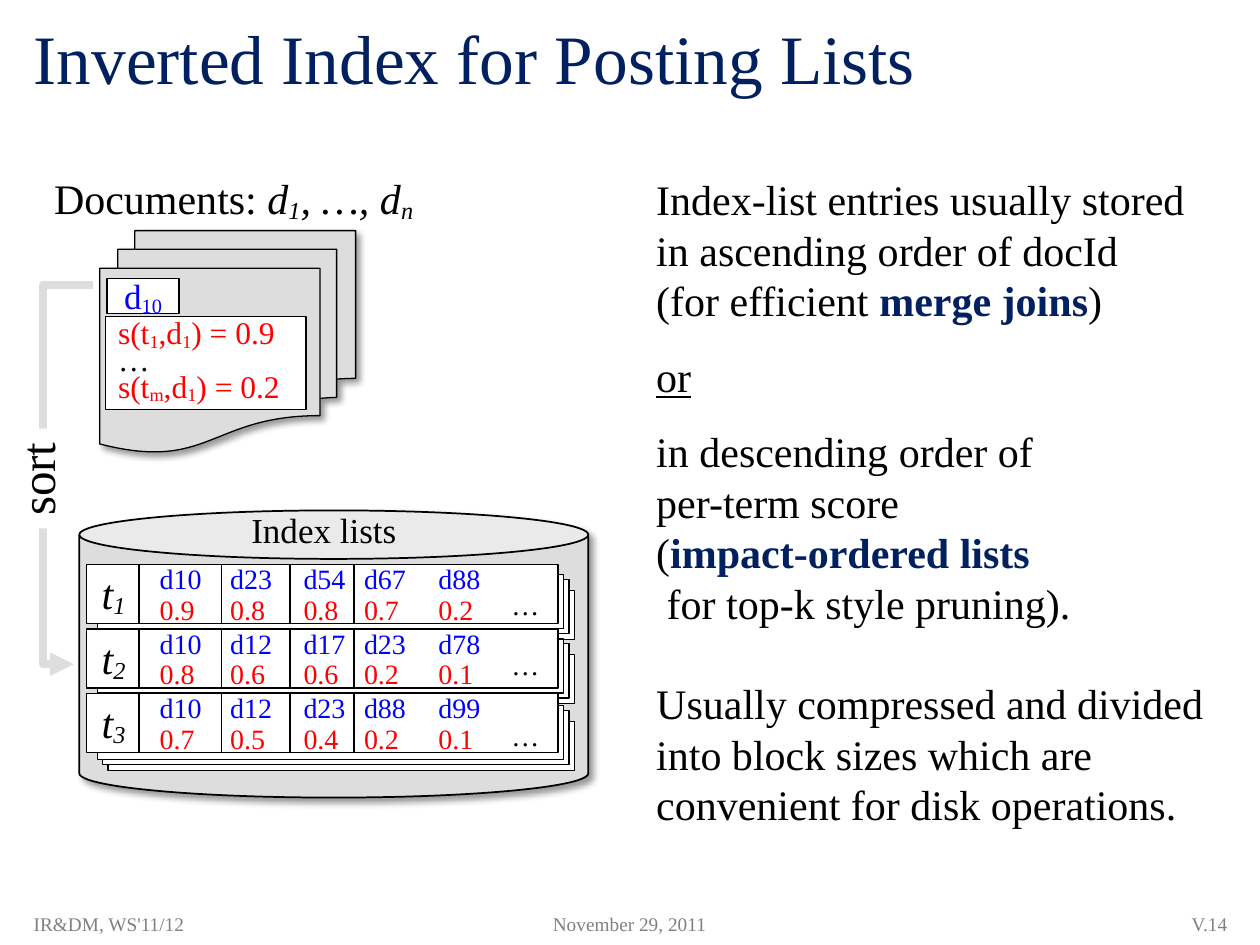
from dataclasses import dataclass
from lxml.etree import SubElement as Sub
from pptx import Presentation as Deck
from pptx.dml.color import RGBColor as Rgb
from pptx.enum.shapes import MSO_CONNECTOR as Conn, MSO_SHAPE as Form
from pptx.enum.text import MSO_ANCHOR as Anchor, MSO_AUTO_SIZE as Fit, PP_ALIGN as Align
from pptx.oxml.ns import qn
from pptx.util import Cm, Pt


@dataclass(frozen=True)
class Theme:
    font: str = "Times New Roman"
    ink: str = "000000"
    navy: str = "002060"
    blue: str = "0000FF"
    red: str = "FF0000"
    grey: str = "808080"
    pale: str = "DDDDDD"
    white: str = "FFFFFF"
    title: float = 39.6
    sort: float = 28
    body: float = 24
    label: float = 20
    score: float = 18
    cell: float = 16
    foot: float = 11
    thin: float = 0.75
    edge: float = 1
    bar: float = 1.5
    arrow: float = 4.5


class Page:
    def __init__(self, deck, theme):
        self.look = theme
        self.slide = deck.slides.add_slide(deck.slide_layouts[6])

    def label(self, shape, paras, size, tone=None, wrap=False, grow=True,
              anchor=Anchor.TOP, para=None, **font):
        frame = shape.text_frame
        form = {"word_wrap": wrap, "vertical_anchor": anchor,
                "auto_size": Fit.SHAPE_TO_FIT_TEXT if grow else Fit.NONE}
        for key, val in form.items():
            setattr(frame, key, val)
        for i, item in enumerate(paras):
            runs, own = item if isinstance(item, tuple) else (item, {})
            line = frame.add_paragraph() if i else frame.paragraphs[0]
            for key, val in ({"alignment": Align.LEFT} | (para or {}) | own).items():
                setattr(line, key, val)
            for part in [runs] if isinstance(runs, str) else runs:
                words, extra = part if isinstance(part, tuple) else (part, {})
                self.piece(line, words, {"size": size, "tone": tone} | font | extra)

    def piece(self, line, words, form):
        run = line.add_run()
        run.text = words
        form = dict(form)
        run.font.color.rgb = Rgb.from_string(form.pop("tone") or self.look.ink)
        if form.pop("sub", False):
            run._r.get_or_add_rPr().set("baseline", "-12000")
        form["size"] = Pt(form["size"])
        for key, val in ({"name": self.look.font} | form).items():
            setattr(run.font, key, val)

    def text(self, spot, paras, size, **form):
        box = self.slide.shapes.add_textbox(*map(Cm, spot))
        self.label(box, paras, size, **form)
        return box

    def shape(self, spot, kind=Form.RECTANGLE, fill=None, width=None, shade=False):
        item = self.slide.shapes.add_shape(kind, *map(Cm, spot))
        item.shadow.inherit = False
        if fill:
            item.fill.solid()
            item.fill.fore_color.rgb = Rgb.from_string(fill)
        else:
            item.fill.background()
        item.line.color.rgb = Rgb.from_string(self.look.ink)
        item.line.width = Pt(width or self.look.thin)
        if shade:
            glow = Sub(item._element.spPr.find(qn("a:effectLst")), qn("a:outerShdw"),
                       blurRad=str(Pt(4)), dist=str(Pt(3)), dir="2700000",
                       algn="tl", rotWithShape="0")
            tint = Sub(glow, qn("a:srgbClr"), val=self.look.ink)
            Sub(tint, qn("a:alpha"), val="40000")
        return item

    def line(self, ends, tone, width, kind=Conn.STRAIGHT, bend=None, head=False):
        link = self.slide.shapes.add_connector(kind, *map(Cm, ends))
        link.line.color.rgb = Rgb.from_string(tone)
        link.line.width = Pt(width)
        props = link._element.spPr
        if bend:
            Sub(props.find(qn("a:prstGeom")).find(qn("a:avLst")), qn("a:gd"),
                name="adj1", fmla=f"val {round(bend * 100000)}")
        if head:
            Sub(props.find(qn("a:ln")), qn("a:tailEnd"), type="triangle")
        Sub(props, qn("a:effectLst"))


def frame(page, look):
    mid = {"wrap": True, "grow": False, "anchor": Anchor.MIDDLE}
    page.text((0.43, 0.2, 24.56, 1.9), ["Inverted Index for Posting Lists"],
              look.title, tone=look.navy, **mid)
    for left, wide, words, side in (
            (9.73, 5.92, "November 29, 2011", Align.CENTER),
            (0.43, 7.62, "IR&DM, WS'11/12", Align.LEFT),
            (19.48, 5.51, "V.14", Align.RIGHT)):
        page.text((left, 18.21, wide, 0.84), [words], look.foot, tone=look.grey,
                  para={"alignment": side}, **mid)


def notes(page, look):
    key = {"tone": look.navy, "bold": True}
    half = {"space_before": Pt(14.4)}
    page.text((12.98, 3.38, 11.79, 14.63), [
        "Index-list entries usually stored",
        "in ascending order of docId",
        ["(for efficient ", ("merge joins", key), ")"],
        ([("or", {"underline": True})], half),
        ("in descending order of", half),
        "per-term score",
        ["(", ("impact-ordered lists", key)],
        " for top-k style pruning).",
        ("Usually compressed and divided", {"space_before": Pt(28.8)}),
        "into block sizes which are",
        "convenient for disk operations."], look.body)


def papers(page, look):
    low = {"sub": True}
    page.shape((2.01, 4.65, 5.16, 4.47), Form.FLOWCHART_MULTIDOCUMENT,
               look.pale, shade=True)
    page.text((0.84, 3.35, 7.9, 1.27),
              [[("Documents: ", {"italic": False}), "d", ("1", low),
                ", …, d", ("n", low)]], look.body, italic=True)
    facts = [["s(t", (term, low), ",d", ("1", low), f") = {val}"]
             for term, val in (("1", "0.9"), ("m", "0.2"))]
    facts.insert(1, [("…", {"tone": look.ink})])
    page.label(page.shape((2.13, 6.38, 4.04, 1.88), fill=look.white), facts,
               look.score, tone=look.red, wrap=True, para={"line_spacing": 0.7})
    page.label(page.shape((2.16, 5.61, 1.45, 0.71), fill=look.white),
               [["d", ("10", low)]], look.label, tone=look.blue, grow=False,
               anchor=Anchor.MIDDLE, para={"alignment": Align.CENTER})


def index(page, look):
    rows = (
        (11.58, 0.33, "d10 0.9 d23 0.8 d54 0.8 d67 0.7 d88 0.2"),
        (12.88, 0.25, "d10 0.8 d12 0.6 d17 0.6 d23 0.2 d78 0.1"),
        (14.22, 0.38, "d10 0.7 d12 0.5 d23 0.4 d88 0.2 d99 0.1"))
    top, step, tall = 11.38, 1.3, 1.19
    edges = (2.82, 4.47, 5.85, 7.14)
    spots = (2.97, 4.39, 5.87, 7.09, 8.59)
    can = page.shape((1.6, 10.29, 10.26, 5.79), Form.CAN, look.pale, look.edge, True)
    can.adjustments[0] = 0.169
    for back, _, _ in rows:
        for left, drop, high in ((2.18, 0.32, 0.99), (2.07, 0.1, 1.09), (1.96, 0, 1.09)):
            page.shape((left, back + drop, 9.4, high), fill=look.white)
    page.text((2.87, 10.13, 7.32, 1.09), ["Index lists"], look.label, wrap=True,
              para={"alignment": Align.CENTER})
    for i, (_, drop, data) in enumerate(rows):
        y = top + i * step
        page.shape((1.75, y, 9.5, tall), fill=look.white)
        page.text((10.06, y + drop, 1.07, 0.94), ["…"], look.cell)
        page.text((1.8, y - 0.06, 1.02, 1.27),
                  [["t", (str(i + 1), {"sub": True})]], look.body, italic=True)
        page.line((2.8, y, 2.8, y + tall), look.ink, look.bar)
        for left, right in zip(edges, edges[1:]):
            page.shape((left, y, right - left, tall))
        words = data.split()
        for x, doc, val in zip(spots, words[::2], words[1::2]):
            page.text((x, y - 0.1, 1.4, 1.49), [doc, [(val, {"tone": look.red})]],
                      look.cell, tone=look.blue, para={"line_spacing": 0.9})


def sort(page, look):
    page.line((1.88, 5.74, 1.49, 13.39), look.pale, look.arrow, Conn.ELBOW, 2.6, True)
    box = page.text((-0.28, 8.92, 2.01, 1.45), ["sort"], look.sort)
    box.rotation = 270
    box.fill.solid()
    box.fill.fore_color.rgb = Rgb.from_string(look.white)


def main():
    deck = Deck()
    deck.slide_width, deck.slide_height = Cm(25.4), Cm(19.05)
    look = Theme()
    page = Page(deck, look)
    for draw in (frame, notes, index, papers, sort):
        draw(page, look)
    deck.save("out.pptx")


if __name__ == "__main__":
    main()
